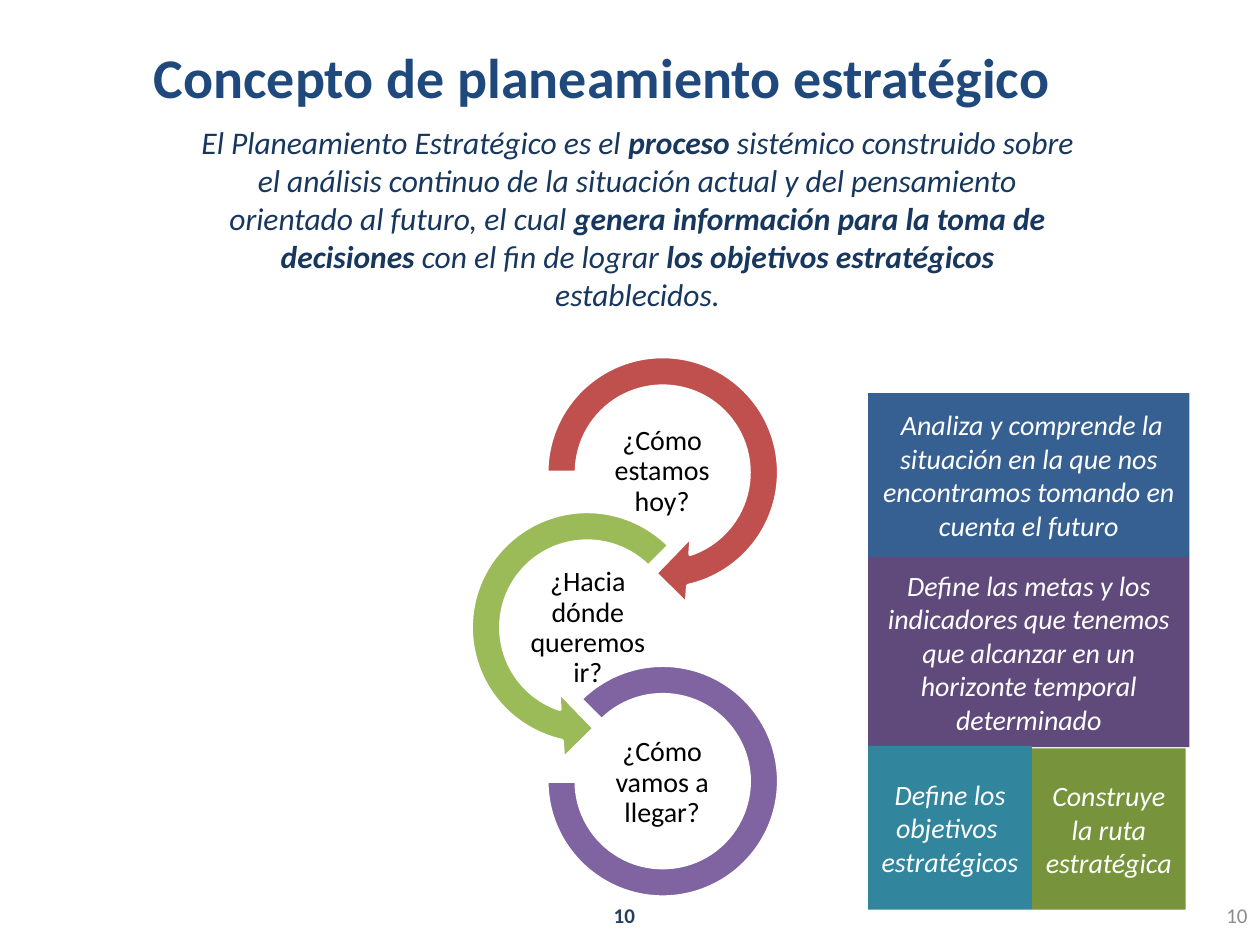
from lxml.etree import SubElement
from pptx import Presentation
from pptx.dml.color import RGBColor
from pptx.enum.shapes import MSO_SHAPE as Shape
from pptx.enum.text import MSO_ANCHOR as Anchor, MSO_AUTO_SIZE as AutoSize, PP_ALIGN as Align
from pptx.oxml.ns import qn
from pptx.util import Inches, Pt

COLORS = {
    "title": "1F497D", "definition": "17375E", "number": "254061", "muted": "8C8C8C",
    "white": "FFFFFF", "black": "000000",
    "today": "C0504D", "future": "9BBB59", "route": "8064A2",
    "analysis": "376092", "goals": "604A7B", "objectives": "31859C", "path": "77933C",
}


def color(name):
    """Return the named palette colour."""
    return RGBColor.from_string(COLORS[name])


def place(part, left, top, width, height):
    """Move and size a part, in inches."""
    part.left, part.top = Inches(left), Inches(top)
    part.width, part.height = Inches(width), Inches(height)


def write(part, text, size=16, ink="white", bold=False, italic=False, align=Align.CENTER,
          anchor=Anchor.MIDDLE, inset=(0.1, 0.05), spacing=1.0):
    """Write text into a part; newlines split paragraphs and ** toggles bold."""
    frame = part.text_frame
    frame.word_wrap, frame.auto_size, frame.vertical_anchor = True, AutoSize.NONE, anchor
    frame.margin_left = frame.margin_right = Inches(inset[0])
    frame.margin_top = frame.margin_bottom = Inches(inset[1])
    for index, line in enumerate(text.split("\n")):
        paragraph = frame.add_paragraph() if index else frame.paragraphs[0]
        paragraph.alignment, paragraph.line_spacing = align, spacing
        paragraph.space_before = Pt(0)
        for position, words in enumerate(line.split("**")):
            run = paragraph.add_run()
            run.text = words
            font = run.font
            font.name, font.size, font.italic = "Calibri", Pt(size), italic
            font.bold = bold or position % 2 == 1
            font.color.rgb = color(ink)


def add_label(slide, box, text, **style):
    """Add a text box holding formatted text."""
    label = slide.shapes.add_textbox(*map(Inches, box))
    write(label, text, **style)


def add_filled(slide, kind, box, fill, outline=None):
    """Add a filled preset shape without shadow."""
    shape = slide.shapes.add_shape(kind, *map(Inches, box))
    shape.shadow.inherit = False
    shape.fill.solid()
    shape.fill.fore_color.rgb = color(fill)
    if outline:
        shape.line.color.rgb = color(outline)
        shape.line.width = Pt(2)
    else:
        shape.line.fill.background()
    return shape


def fill_heading(slide, left, top):
    """Fill the title and the definition below it."""
    title, definition = slide.shapes.title, slide.placeholders[1]
    place(title, left, top, 7.67, 0.64)
    write(title, "Concepto de planeamiento estratégico", size=32, ink="title", bold=True,
          align=Align.LEFT, anchor=Anchor.TOP)
    place(definition, left + 0.35, top + 0.64, 7.18, 1.62)
    write(definition,
          "El Planeamiento Estratégico es el **proceso** sistémico construido sobre el análisis "
          "continuo de la situación actual y del pensamiento orientado al futuro, el cual "
          "**genera información para la toma de decisiones **con el fin de lograr "
          "**los objetivos estratégicos **establecidos.",
          size=18, ink="definition", italic=True, anchor=Anchor.TOP)
    properties = definition.text_frame.paragraphs[0]._p.get_or_add_pPr()
    properties.set("marL", "0")
    properties.set("indent", "0")
    SubElement(properties, qn("a:buNone"))


def add_question_cycle(slide, left, top):
    """Add the three chained arcs and their questions."""
    arcs = [
        (Shape.CIRCULAR_ARROW, 0.6, 0, 2.14, "today", (0.11, 11.42, 45, 108, 0.125),
         1.07, 0.77, "¿Cómo estamos hoy?"),
        (Shape.LEFT_CIRCULAR_ARROW, 0, 1.23, 2.14, "future", (0.11, 11.42, 63, 189, 0.125),
         0.48, 2.01, "¿Hacia dónde queremos ir?"),
        (Shape.BLOCK_ARC, 0.75, 2.6, 1.84, "route", (135, 108, 0.127),
         1.07, 3.24, "¿Cómo vamos a llegar?"),
    ]
    for kind, x, y, side, fill, adjustments, text_x, text_y, question in arcs:
        arc = add_filled(slide, kind, (left + x, top + y, side, side), fill, outline="white")
        for index, value in enumerate(adjustments):
            arc.adjustments[index] = value
        add_label(slide, (left + text_x, top + text_y, 1.19, 0.59), question, ink="black",
                  inset=(0.01, 0.01), spacing=0.9)


def add_answer_blocks(slide, left, top):
    """Add the coloured blocks that answer the questions."""
    blocks = [
        (0, 0, 2.55, 1.3, "analysis", " Analiza y comprende la situación en la que nos "
         "encontramos tomando en cuenta el futuro"),
        (0, 1.3, 2.55, 1.51, "goals", "Define las metas y los indicadores que tenemos que "
         "alcanzar en un horizonte temporal determinado"),
        (0, 2.8, 1.3, 1.3, "objectives", "Define los objetivos  estratégicos"),
        (1.3, 2.82, 1.22, 1.28, "path", "Construye\nla ruta estratégica"),
    ]
    for x, y, width, height, fill, answer in blocks:
        block = add_filled(slide, Shape.RECTANGLE, (left + x, top + y, width, height), fill)
        write(block, answer, italic=True)


def add_page_numbers(slide, top):
    """Add the centred and the right-hand page numbers."""
    add_label(slide, (3.79, top, 2.33, 0.4), "10", size=12, ink="number", bold=True)
    add_label(slide, (7.67, top, 2.33, 0.4), "10", size=12, ink="muted", align=Align.RIGHT)


def main():
    """Build and save the slide."""
    deck = Presentation()
    deck.slide_width, deck.slide_height = Inches(10), Inches(7.5)
    slide = deck.slides.add_slide(deck.slide_layouts[1])
    add_page_numbers(slide, 7.06)
    fill_heading(slide, 1.12, 0.29)
    add_question_cycle(slide, 3.59, 2.68)
    add_answer_blocks(slide, 6.89, 3.12)
    deck.save("out.pptx")


if __name__ == "__main__":
    main()
